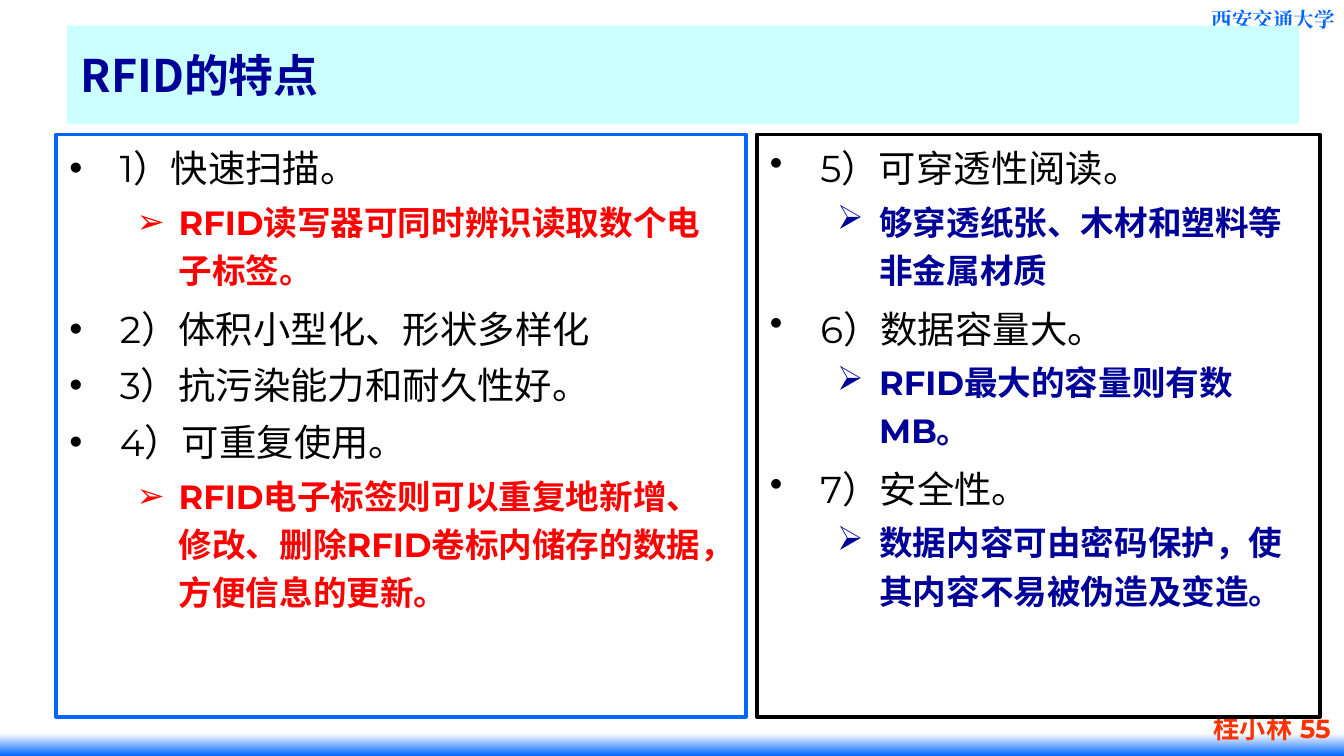
from pptx import Presentation
from pptx.dml.color import RGBColor
from pptx.enum.shapes import MSO_SHAPE
from pptx.enum.text import MSO_ANCHOR, MSO_AUTO_SIZE, PP_ALIGN
from pptx.oxml.ns import qn
from pptx.util import Pt
from lxml import etree

RECT = MSO_SHAPE.RECTANGLE
TOP, MIDDLE = MSO_ANCHOR.TOP, MSO_ANCHOR.MIDDLE
LEFT, CENTER, RIGHT = PP_ALIGN.LEFT, PP_ALIGN.CENTER, PP_ALIGN.RIGHT
NO_FIT = MSO_AUTO_SIZE.NONE

W, H = 720, 405
C = {"white": "FFFFFF", "blue": "0066FF", "navy": "000099", "cyan": "CCFFFF",
     "red": "FF0000", "orange": "FF3300", "black": "000000"}
BODY_FONT, TITLE_FONT, MARK_FONT = "Montserrat", "Noto Sans CJK SC", "Times New Roman"

LEVELS = [
    dict(bullet="•", margin=27, indent=-27, size=20, line=1.1, before=4, after=0),
    dict(bullet="➢", margin=58.5, indent=-22.5, size=18, line=1.2, before=1.8, after=1.8),
]
LEFT_ITEMS = [
    (0, "1）快速扫描。"),
    (1, "RFID读写器可同时辨识读取数个电子标签。"),
    (0, "2）体积小型化、形状多样化"),
    (0, "3）抗污染能力和耐久性好。"),
    (0, "4）可重复使用。"),
    (1, "RFID电子标签则可以重复地新增、修改、删除RFID卷标内储存的数据，方便信息的更新。"),
]
RIGHT_ITEMS = [
    (0, "5）可穿透性阅读。"),
    (1, "够穿透纸张、木材和塑料等非金属材质"),
    (0, "6）数据容量大。"),
    (1, "RFID最大的容量则有数MB。"),
    (0, "7）安全性。"),
    (1, "数据内容可由密码保护，使其内容不易被伪造及变造。"),
]


def rgb(name):
    return RGBColor.from_string(C[name])


def place(sp, box):
    sp.left, sp.top, sp.width, sp.height = (Pt(v) for v in box)


def to_front(s, sp):
    s.shapes._spTree.append(sp._element)


def add_run(p, text, size, color, font, bold=False):
    r = p.add_run()
    r.text = text
    r.font.size = Pt(size)
    r.font.bold = bold
    r.font.name = font
    r.font.color.rgb = rgb(color)
    etree.SubElement(r._r.get_or_add_rPr(), qn("a:ea"), typeface=font)
    return r


def add_label(s, box, text, size, color, font, align, wrap=True):
    tf = s.shapes.add_textbox(*(Pt(v) for v in box)).text_frame
    tf.word_wrap = wrap
    p = tf.paragraphs[0]
    p.alignment = align
    return add_run(p, text, size, color, font, True)


def add_footer_band(s, box):
    sp = s.shapes.add_shape(RECT, *(Pt(v) for v in box))
    sp.shadow.inherit = False
    sp.line.fill.background()
    sp.fill.gradient()
    sp.fill.gradient_angle = 270
    for stop, color, pos in zip(sp.fill.gradient_stops, ("white", "blue"), (0, 1)):
        stop.color.rgb = rgb(color)
        stop.position = pos


def add_school(s, box):
    r = add_label(s, box, "西安交通大学", 11, "blue", MARK_FONT, CENTER, False)
    ln = etree.Element(qn("a:ln"), w=str(Pt(1.42)))
    fill = etree.SubElement(ln, qn("a:solidFill"))
    etree.SubElement(fill, qn("a:srgbClr"), val=C["blue"])
    r._r.get_or_add_rPr().insert(0, ln)


def add_title(s, box):
    sp = s.shapes.title
    place(sp, box)
    to_front(s, sp)
    sp.fill.solid()
    sp.fill.fore_color.rgb = rgb("cyan")
    tf = sp.text_frame
    tf.auto_size = NO_FIT
    tf.vertical_anchor = MIDDLE
    p = tf.paragraphs[0]
    p.alignment = LEFT
    add_run(p, "RFID的特点", 24, "navy", TITLE_FONT, True)


def fill_panel(s, sp, box, items, border, accent):
    place(sp, box)
    to_front(s, sp)
    sp.fill.solid()
    sp.fill.fore_color.rgb = rgb("white")
    sp.line.color.rgb = rgb(border)
    sp.line.width = Pt(2)
    tf = sp.text_frame
    tf.word_wrap = True
    tf.auto_size = NO_FIT
    tf.vertical_anchor = TOP
    for i, (level, text) in enumerate(items):
        style = LEVELS[level]
        p = tf.add_paragraph() if i else tf.paragraphs[0]
        p.level = level
        p.alignment = LEFT
        p.line_spacing = style["line"]
        p.space_before = Pt(style["before"] if i else 0)
        p.space_after = Pt(style["after"])
        pPr = p._p.get_or_add_pPr()
        pPr.set("marL", str(Pt(style["margin"])))
        pPr.set("indent", str(Pt(style["indent"])))
        etree.SubElement(pPr, qn("a:buChar"), char=style["bullet"])
        add_run(p, text, style["size"], accent if level else "black", BODY_FONT, level == 1)


def main():
    prs = Presentation()
    prs.slide_width, prs.slide_height = Pt(W), Pt(H)
    s = prs.slides.add_slide(prs.slide_layouts[1])
    add_footer_band(s, (0, H - 12, W, 12))
    add_school(s, (641.5, 0, 81.4, 21))
    add_label(s, (507.6, 378, 212.4, 27), "桂小林 55", 14, "orange", BODY_FONT, RIGHT)
    add_title(s, (36, 13.7, 660, 52.6))
    fill_panel(s, s.placeholders[1], (30, 72, 369.5, 312), LEFT_ITEMS, "blue", "red")
    panel = s.shapes.add_shape(RECT, 0, 0, 0, 0)
    panel.shadow.inherit = False
    fill_panel(s, panel, (405.4, 72, 301.7, 312), RIGHT_ITEMS, "black", "navy")
    prs.save("out.pptx")


if __name__ == "__main__":
    main()
